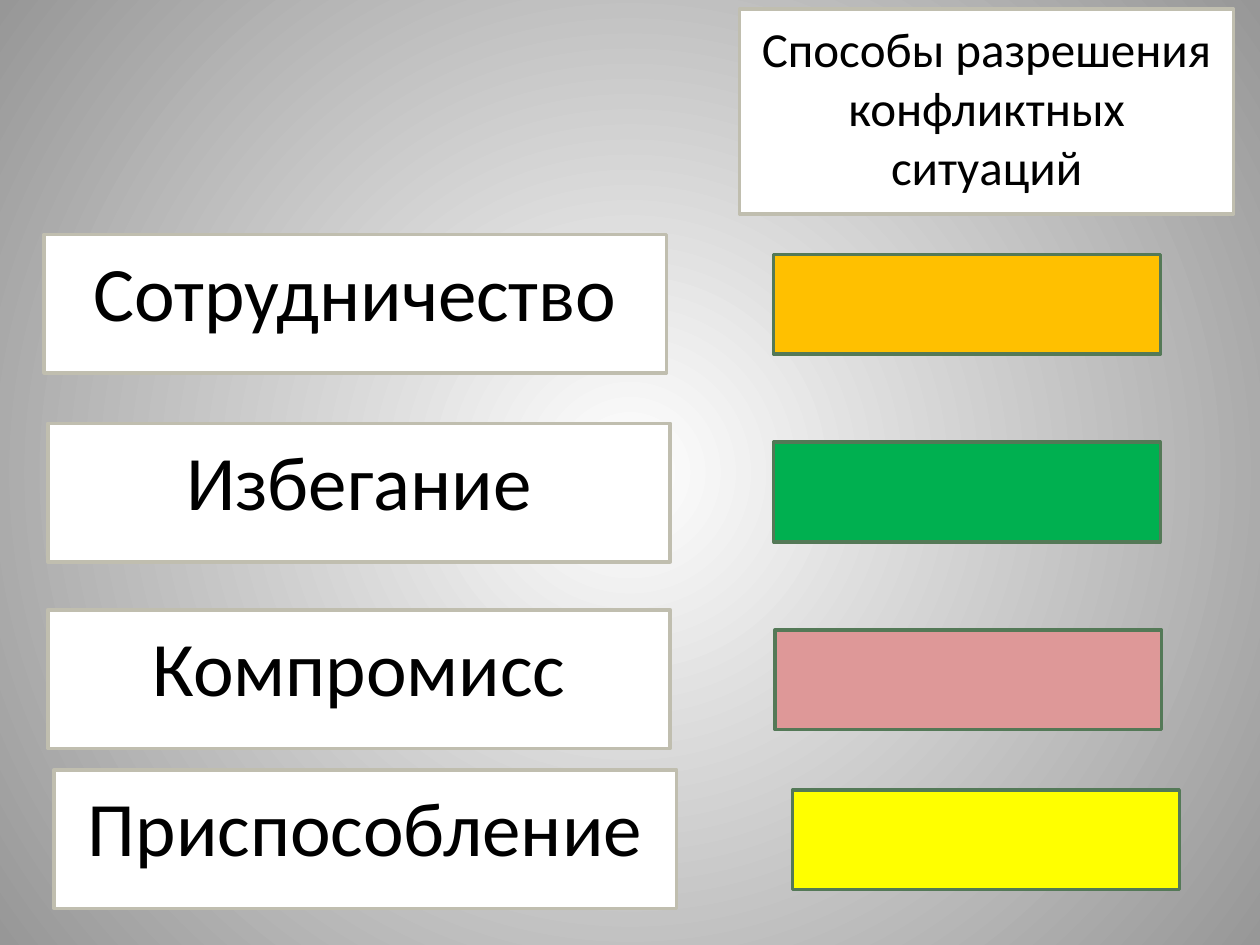
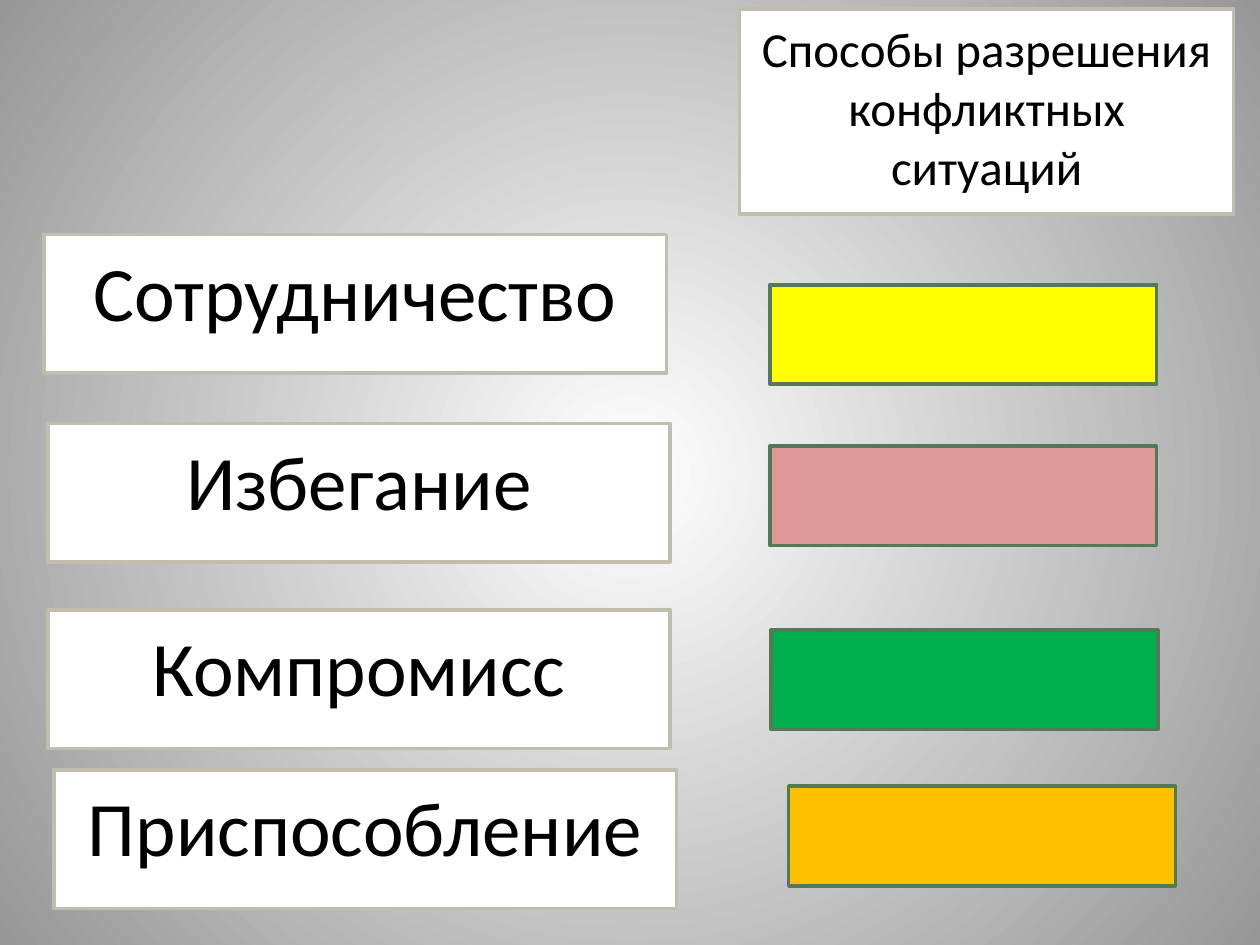
from typing import NamedTuple

from lxml.etree import SubElement
from pptx import Presentation
from pptx.dml.color import RGBColor
from pptx.enum.shapes import MSO_SHAPE
from pptx.enum.text import MSO_ANCHOR, MSO_AUTO_SIZE, PP_ALIGN
from pptx.oxml.ns import qn
from pptx.util import Inches, Pt

WHITE = RGBColor(0xFF, 0xFF, 0xFF)
BLACK = RGBColor(0x00, 0x00, 0x00)
GREY = RGBColor(0x97, 0x97, 0x97)
SAND = RGBColor(0xC0, 0xBE, 0xAF)
MOSS = RGBColor(0x54, 0x79, 0x57)
PINK = RGBColor(0xDE, 0x98, 0x98)
GREEN = RGBColor(0x00, 0xB0, 0x50)
YELLOW = RGBColor(0xFF, 0xFF, 0x00)
AMBER = RGBColor(0xFF, 0xC0, 0x00)

FONT = "Calibri"
WIDTH, HEIGHT = Inches(10), Inches(7.5)
COLS, ROWS = 100, 75


class Area(NamedTuple):
    col: float
    row: float
    wide: float
    high: float


class Label(NamedTuple):
    text: str
    col: float
    row: float


class Chip(NamedTuple):
    fill: RGBColor
    col: float
    row: float


TITLE = "Способы разрешения конфликтных ситуаций"
HEAD = Area(58.7, 0.7, 39.2, 16.3)
LABELS = [
    Label("Сотрудничество", 3.5, 18.6),
    Label("Избегание", 3.8, 33.6),
    Label("Компромисс", 3.8, 48.4),
    Label("Приспособление", 4.3, 61.1),
]
SLIDES = [
    [
        Chip(AMBER, 61.4, 20.2),
        Chip(GREEN, 61.4, 35.1),
        Chip(PINK, 61.5, 50),
        Chip(YELLOW, 62.9, 62.7),
    ],
    [
        Chip(YELLOW, 61.1, 22.6),
        Chip(PINK, 61.1, 35.4),
        Chip(GREEN, 61.2, 50),
        Chip(AMBER, 62.6, 62.4),
    ],
]


def place(shape, area: Area) -> None:
    shape.left = round(WIDTH * area.col / COLS)
    shape.top = round(HEIGHT * area.row / ROWS)
    shape.width = round(WIDTH * area.wide / COLS)
    shape.height = round(HEIGHT * area.high / ROWS)


def paint(shape, fill: RGBColor, edge: RGBColor) -> None:
    shape.fill.solid()
    shape.fill.fore_color.rgb = fill
    shape.line.color.rgb = edge
    shape.line.width = Pt(2)


def write(shape, text: str, size: int) -> None:
    frame = shape.text_frame
    frame.text = text
    frame.word_wrap = True
    frame.auto_size = MSO_AUTO_SIZE.NONE
    frame.vertical_anchor = MSO_ANCHOR.TOP
    frame.margin_top = Inches(0.08)
    line = frame.paragraphs[0]
    line.alignment = PP_ALIGN.CENTER
    font = line.runs[0].font
    font.name = FONT
    font.size = Pt(size)
    font.color.rgb = BLACK


def add_box(slide, area: Area, fill: RGBColor, edge: RGBColor):
    box = slide.shapes.add_shape(MSO_SHAPE.RECTANGLE, 0, 0, 0, 0)
    box.shadow.inherit = False
    place(box, area)
    paint(box, fill, edge)
    return box


def set_back(master) -> None:
    fill = master.background.fill
    fill.gradient()
    for stop, tone, spot in zip(fill.gradient_stops, (WHITE, GREY), (0, 1)):
        stop.color.rgb = tone
        stop.position = spot
    grad = master.element.find(".//" + qn("p:bgPr")).find(qn("a:gradFill"))
    grad.remove(grad.find(qn("a:lin")))
    glow = SubElement(grad, qn("a:path"), {"path": "circle"})
    sides = {side: "50000" for side in "ltrb"}
    SubElement(glow, qn("a:fillToRect"), sides)


def add_page(deck, chips: list[Chip]) -> None:
    slide = deck.slides.add_slide(deck.slide_layouts[5])
    title = slide.shapes.title
    place(title, HEAD)
    paint(title, WHITE, SAND)
    write(title, TITLE, 28)
    for label in LABELS:
        area = Area(label.col, label.row, 49.4, 11)
        write(add_box(slide, area, WHITE, SAND), label.text, 44)
    for chip in chips:
        add_box(slide, Area(chip.col, chip.row, 30.7, 7.9), chip.fill, MOSS)


def main() -> None:
    deck = Presentation()
    deck.slide_width, deck.slide_height = WIDTH, HEIGHT
    set_back(deck.slide_master)
    for chips in SLIDES:
        add_page(deck, chips)
    deck.save("out.pptx")


if __name__ == "__main__":
    main()
